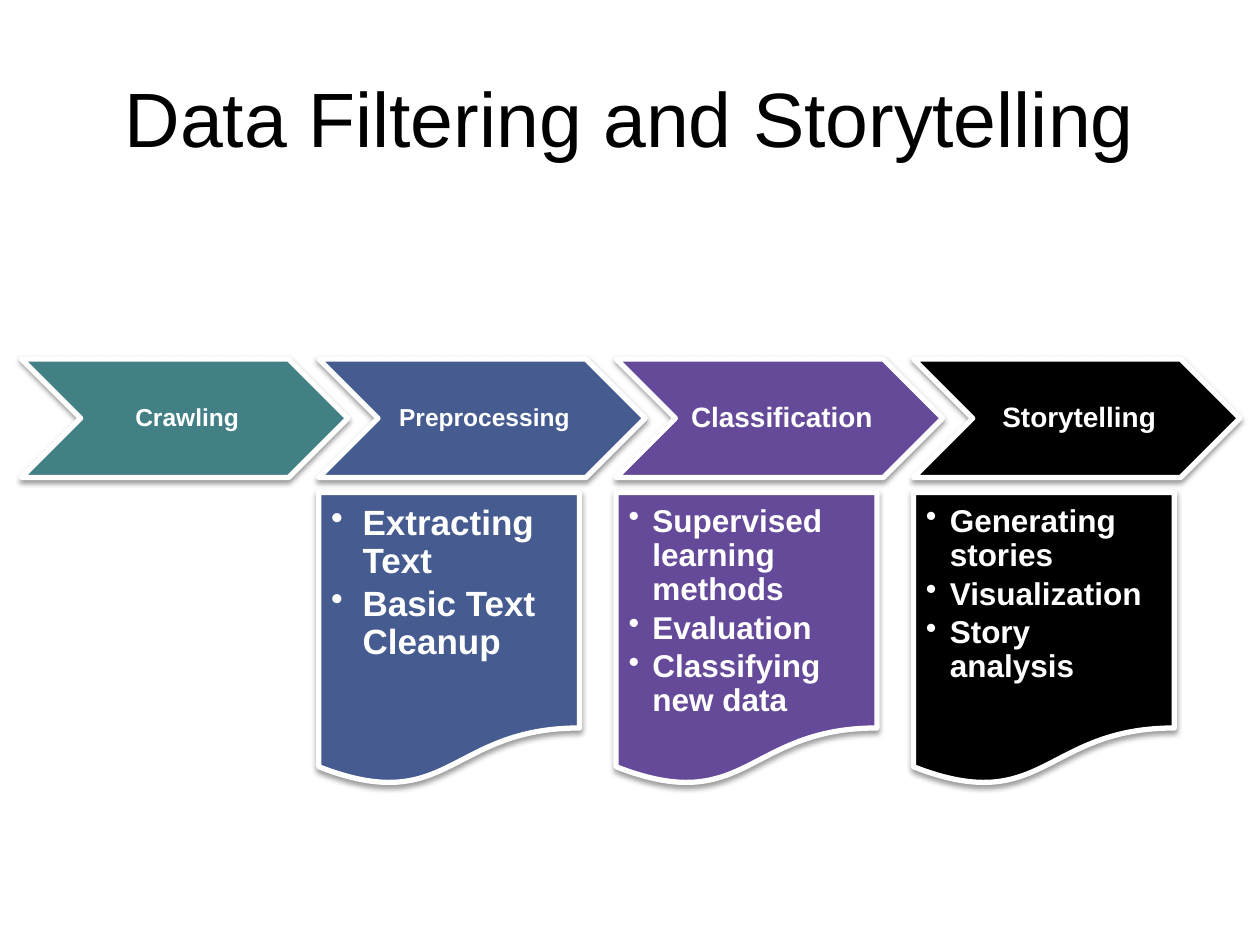
"""Build a four-step process slide on data filtering and storytelling."""
import pptx
import pptx.util
import pptx.dml.color
import pptx.enum.shapes
import pptx.enum.text
import pptx.oxml

Inches, Pt = pptx.util.Inches, pptx.util.Pt
RGBColor = pptx.dml.color.RGBColor
KIND = pptx.enum.shapes.MSO_SHAPE
ALIGN = pptx.enum.text.PP_ALIGN
ANCHOR = pptx.enum.text.MSO_ANCHOR

TEAL = RGBColor(0x43, 0x80, 0x86)
BLUE = RGBColor(0x46, 0x5B, 0x90)
PURPLE = RGBColor(0x65, 0x4A, 0x99)
BLACK = RGBColor(0, 0, 0)
WHITE = RGBColor(255, 255, 255)
NS = 'xmlns:a="http://schemas.openxmlformats.org/drawingml/2006/main"'
SHADE = (f'<a:outerShdw {NS} blurRad="{Pt(3.1)}" dist="{Pt(1.6)}" dir="5400000" rotWithShape="0">'
         '<a:srgbClr val="000000"><a:alpha val="38000"/></a:srgbClr></a:outerShdw>')
LEFT, STEP = 0.17, 2.36
STEPS = [
    ("Crawling", TEAL, 14, 0, 0, []),
    ("Preprocessing", BLUE, 14, 20, 0.25, ["Extracting Text", "Basic Text Cleanup"]),
    ("Classification", PURPLE, 16, 18, 0.19,
     ["Supervised learning methods", "Evaluation", "Classifying new data"]),
    ("Storytelling", BLACK, 16, 18, 0.19,
     ["Generating stories", "Visualization", "Story analysis"]),
]


def add_run(para, text, size, color, bold):
    run = para.add_run()
    run.text = text
    run.font.name = "Arial"
    run.font.size = Pt(size)
    run.font.bold = bold
    run.font.color.rgb = color


def add_box(kind, x, y, w, h, color, pads, anchor):
    box = slide.shapes.add_shape(kind, Inches(x), Inches(y), Inches(w), Inches(h))
    box.fill.solid()
    box.fill.fore_color.rgb = color
    box.line.color.rgb = WHITE
    box.line.width = Pt(3)
    box.shadow.inherit = False
    box._element.spPr.find(pptx.oxml.ns.qn("a:effectLst")).append(pptx.oxml.parse_xml(SHADE))
    frame = box.text_frame
    frame.word_wrap = True
    frame.vertical_anchor = anchor
    frame.margin_left, frame.margin_top, frame.margin_right, frame.margin_bottom = map(Inches, pads)
    return frame


deck = pptx.Presentation()
deck.slide_width, deck.slide_height = Inches(10), Inches(7.5)
slide = deck.slides.add_slide(deck.slide_layouts[5])

title = slide.shapes.title
title.left, title.top, title.width, title.height = map(Inches, (0.5, 0.3, 9, 1.25))
title.text_frame.vertical_anchor = ANCHOR.MIDDLE
para = title.text_frame.paragraphs[0]
para.alignment = ALIGN.CENTER
add_run(para, "Data Filtering and Storytelling", 44, BLACK, False)

for col, (name, color, head, size, dent, items) in enumerate(STEPS):
    x = LEFT + col * STEP
    frame = add_box(KIND.CHEVRON, x, 2.85, 2.59, 0.94, color,
                    (0.06, 0.02, 0.02, 0.02), ANCHOR.MIDDLE)
    para = frame.paragraphs[0]
    para.alignment = ALIGN.CENTER
    para.line_spacing = 0.9
    add_run(para, name, head, WHITE, True)
    if not items:
        continue
    frame = add_box(KIND.FLOWCHART_DOCUMENT, x, 3.91, 2.07, 2.33, color, [0.1] * 4, ANCHOR.TOP)
    for row, item in enumerate(items):
        para = frame.add_paragraph() if row else frame.paragraphs[0]
        para.alignment = ALIGN.LEFT
        para.level = 1
        para.line_spacing = 0.9
        para.space_after = Pt(size * 0.15)
        props = para._p.get_or_add_pPr()
        props.set("marL", str(Inches(dent)))
        props.set("indent", str(-Inches(dent)))
        props.append(pptx.oxml.parse_xml(f'<a:buChar {NS} char="•"/>'))
        add_run(para, item, size, WHITE, True)

deck.save("out.pptx")
